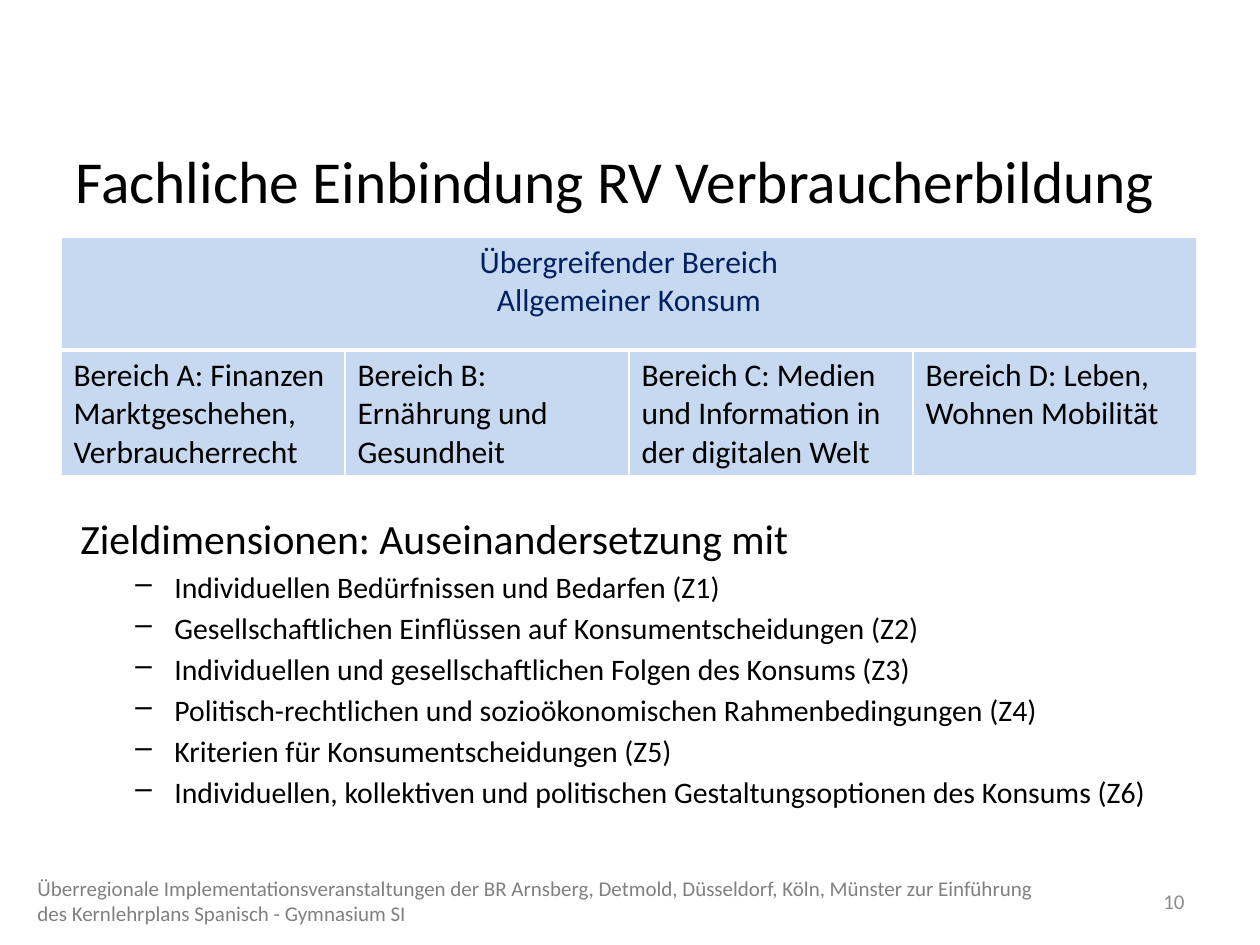
from lxml import etree
from pptx import Presentation
from pptx.dml.color import RGBColor
from pptx.enum.text import MSO_ANCHOR, PP_ALIGN
from pptx.oxml.ns import qn
from pptx.util import Emu, Pt

LEFT, CENTER, RIGHT = PP_ALIGN.LEFT, PP_ALIGN.CENTER, PP_ALIGN.RIGHT
TOP, MIDDLE = MSO_ANCHOR.TOP, MSO_ANCHOR.MIDDLE
FONT = "Calibri"
COLORS = {
    "black": "000000", "white": "FFFFFF", "navy": "002060",
    "pale blue": "C6D9F1", "footer": "808080", "number": "8C8C8C",
}

TITLE = "Fachliche Einbindung RV Verbraucherbildung"
OVERARCHING_AREA = ["Übergreifender Bereich", "Allgemeiner Konsum"]
AREAS = [
    "Bereich A: Finanzen Marktgeschehen, Verbraucherrecht",
    "Bereich B: Ernährung und Gesundheit",
    "Bereich C: Medien und Information in der digitalen Welt",
    "Bereich D: Leben, Wohnen Mobilität",
]
GOALS_HEADING = "Zieldimensionen: Auseinandersetzung mit"
GOALS = [
    "Individuellen Bedürfnissen und Bedarfen (Z1)",
    "Gesellschaftlichen Einflüssen auf Konsumentscheidungen (Z2)",
    "Individuellen und gesellschaftlichen Folgen des Konsums (Z3)",
    "Politisch-rechtlichen und sozioökonomischen Rahmenbedingungen (Z4)",
    "Kriterien für Konsumentscheidungen (Z5)",
    "Individuellen, kollektiven und politischen Gestaltungsoptionen des Konsums (Z6)",
]
FOOTER = (
    "Überregionale Implementationsveranstaltungen der BR Arnsberg, Detmold, "
    "Düsseldorf, Köln, Münster zur Einführung des Kernlehrplans Spanisch - Gymnasium SI"
)
PAGE_NUMBER = "10"
COLUMN_WIDTH = 284
ROW_HEIGHTS = [113, 126]


def px(length):
    return Emu(round(length * 914400 / 126))


def rgb(name):
    return RGBColor.from_string(COLORS[name])


def write(frame, lines, size, color, align=LEFT):
    """Fill the frame with one paragraph a line and return the paragraphs."""
    frame.word_wrap = True
    frame.text = "\n".join(lines)
    for para in frame.paragraphs:
        para.alignment = align
        style(para, size, color)
    return frame.paragraphs


def style(para, size, color):
    para.font.name = FONT
    para.font.size = Pt(size)
    para.font.color.rgb = rgb(color)


def add_text(page, at, lines, size, color, align=LEFT, anchor=MIDDLE):
    box = page.shapes.add_textbox(*map(px, at))
    box.text_frame.vertical_anchor = anchor
    write(box.text_frame, lines, size, color, align)
    return box


def indent(para, margin, hanging=0, bullet=None):
    props = para._p.get_or_add_pPr()
    props.set("marL", str(px(margin)))
    props.set("indent", str(-px(hanging)))
    if bullet:
        etree.SubElement(props, qn("a:buChar"), char=bullet)


def add_goals(page):
    box = add_text(page, (60, 507, 1134, 324), [GOALS_HEADING], 23.8, "black", anchor=TOP)
    box.fill.solid()
    box.fill.fore_color.rgb = rgb("white")
    indent(box.text_frame.paragraphs[0], 8)
    for goal in GOALS:
        para = box.text_frame.add_paragraph()
        para.text = goal
        para.level = 1
        para.space_before = Pt(3)
        indent(para, 102, 39, "–")
        style(para, 17, "black")


def format_cell(cell, top, bottom):
    """Give the cell white borders (widths in points) and its fill."""
    props = cell._tc.get_or_add_tcPr()
    for side, width in (("L", 1), ("R", 1), ("T", top), ("B", bottom)):
        line = etree.SubElement(props, qn(f"a:ln{side}"), w=str(Pt(width)))
        fill = etree.SubElement(line, qn("a:solidFill"))
        etree.SubElement(fill, qn("a:srgbClr"), val=COLORS["white"])
    cell.fill.solid()
    cell.fill.fore_color.rgb = rgb("pale blue")


def add_areas(page):
    count = len(AREAS)
    frame = page.shapes.add_table(
        2, count, px(61), px(237), px(count * COLUMN_WIDTH), px(sum(ROW_HEIGHTS)))
    table = frame.table
    for column in table.columns:
        column.width = px(COLUMN_WIDTH)
    for row, height in zip(table.rows, ROW_HEIGHTS):
        row.height = px(height)
    for index, area in enumerate(AREAS):
        format_cell(table.cell(0, index), 1, 3)
        format_cell(table.cell(1, index), 3, 1)
        write(table.cell(1, index).text_frame, [area], 18, "black")
    header = table.cell(0, 0)
    header.merge(table.cell(0, count - 1))
    write(header.text_frame, OVERARCHING_AREA, 18, "navy", CENTER)


def main():
    deck = Presentation()
    deck.slide_width, deck.slide_height = px(1260), px(945)
    page = deck.slides.add_slide(deck.slide_layouts[6])
    add_text(page, (63, 155, 1134, 49), [TITLE], 34, "black")
    add_goals(page)
    add_text(page, (1116, 876, 81, 50), [PAGE_NUMBER], 12, "number", RIGHT)
    add_areas(page)
    add_text(page, (25, 876, 1042, 50), [FOOTER], 12, "footer")
    deck.save("out.pptx")


if __name__ == "__main__":
    main()
